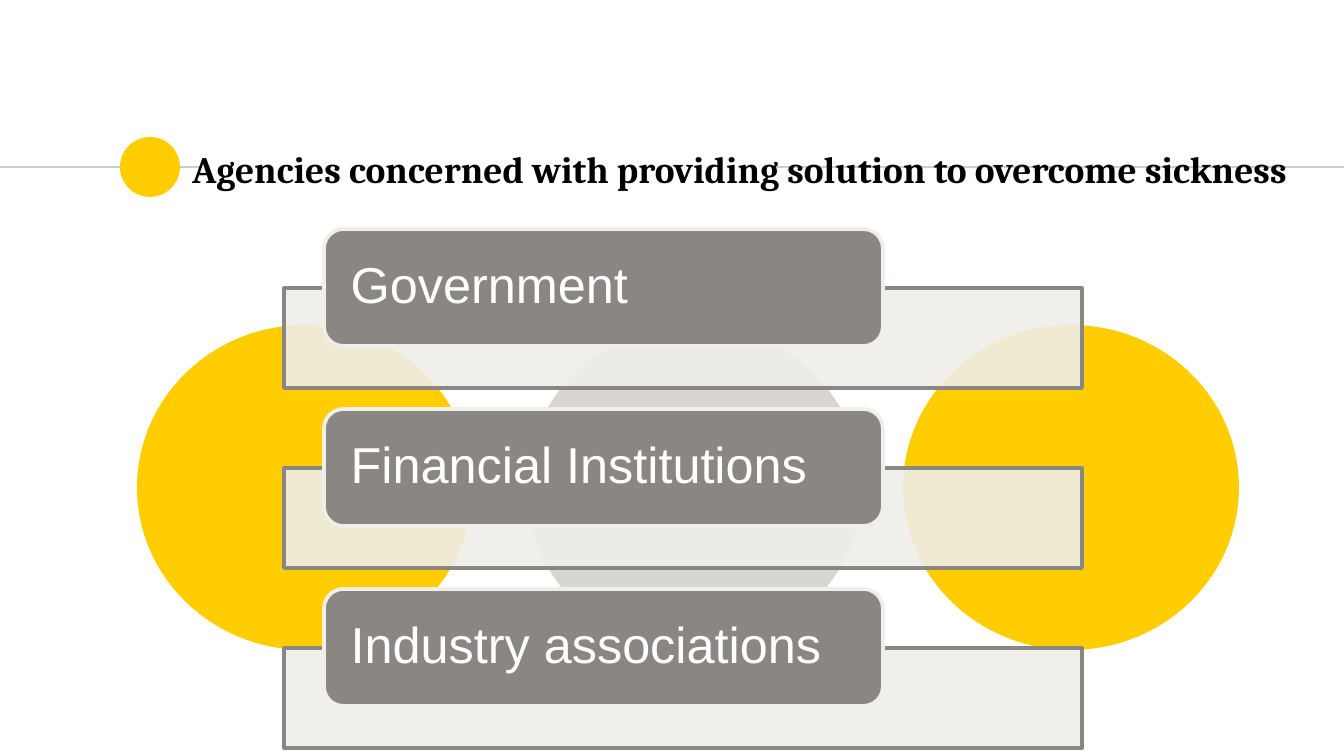
"""Build a slide listing the agencies that help overcome industrial sickness."""
from dataclasses import dataclass

import pptx
import pptx.util
from lxml import etree
from pptx.dml.color import RGBColor
from pptx.enum.shapes import MSO_CONNECTOR, MSO_SHAPE
from pptx.enum.text import MSO_ANCHOR, PP_ALIGN
from pptx.oxml.ns import qn

PX = 914400 / 134.4


@dataclass(frozen=True)
class Theme:
    yellow: str = "FFCD00"
    grey: str = "D8D6D2"
    rule: str = "CCCCCC"
    dark: str = "8A8682"
    pale: str = "F0EEE9"
    black: str = "000000"
    white: str = "FFFFFF"
    title_font: str = "Cambria"
    label_font: str = "Arial"
    title_size: int = 20
    label_size: int = 27
    border: float = 2
    hairline: float = 0.75
    bar_alpha: int = 90


@dataclass(frozen=True)
class Box:
    x: int
    y: int
    w: int
    h: int


@dataclass(frozen=True)
class Disc:
    box: Box
    color: str


@dataclass(frozen=True)
class Agency:
    name: str
    y: int


THEME = Theme()
ROW_TOP, ROW_PITCH = 229, 180
NAMES = ("Government", "Financial Institutions", "Industry associations")
AGENCIES = [Agency(name, ROW_TOP + i * ROW_PITCH) for i, name in enumerate(NAMES)]
BULLET = Disc(Box(120, 137, 60, 60), THEME.yellow)
DISCS = (
    Disc(Box(137, 325, 336, 325), THEME.yellow),
    Disc(Box(526, 325, 336, 325), THEME.grey),
    Disc(Box(903, 325, 336, 325), THEME.yellow),
)


def px(n: int) -> int:
    """Turn px into EMU."""
    return round(n * PX)


def place(box: Box) -> tuple[int, int, int, int]:
    """Return the box in EMU."""
    return px(box.x), px(box.y), px(box.w), px(box.h)


def rgb(color: str) -> RGBColor:
    """Return a colour from its hex code."""
    return RGBColor.from_string(color)


def add_shape(s, kind: MSO_SHAPE, box: Box, fill: str, line: str | None = None):
    """Draw a flat preset shape."""
    sp = s.shapes.add_shape(kind, *place(box))
    sp.shadow.inherit = False
    sp.fill.solid()
    sp.fill.fore_color.rgb = rgb(fill)
    if line:
        sp.line.color.rgb = rgb(line)
        sp.line.width = pptx.util.Pt(THEME.border)
    else:
        sp.line.fill.background()
    return sp


def add_rule(s, x1: int, x2: int, y: int) -> None:
    """Draw a thin horizontal line."""
    line = s.shapes.add_connector(MSO_CONNECTOR.STRAIGHT, px(x1), px(y), px(x2), px(y))
    line.line.color.rgb = rgb(THEME.rule)
    line.line.width = pptx.util.Pt(THEME.hairline)
    etree.SubElement(line._element.spPr, qn("a:effectLst"))


def write(sp, text: str, font: str, size: int, color: str, inset: int, bold: bool = False):
    """Write one left-aligned line, centred vertically, and return its paragraph."""
    tf = sp.text_frame
    tf.word_wrap = True
    tf.vertical_anchor = MSO_ANCHOR.MIDDLE
    tf.margin_left = tf.margin_right = px(inset)
    tf.margin_top = tf.margin_bottom = 0
    p = tf.paragraphs[0]
    p.text = text
    p.alignment = PP_ALIGN.LEFT
    p.font.name = font
    p.font.size = pptx.util.Pt(size)
    p.font.bold = bold
    p.font.color.rgb = rgb(color)
    return p


def add_disc(s, disc: Disc) -> None:
    """Draw a plain ellipse."""
    add_shape(s, MSO_SHAPE.OVAL, disc.box, disc.color)


def add_title(s, text: str) -> None:
    """Draw the heading with its bullet and rules."""
    add_rule(s, 0, 202, 167)
    add_disc(s, BULLET)
    add_rule(s, 774, 1344, 167)
    sp = s.shapes.add_textbox(*place(Box(179, 136, 1165, 65)))
    write(sp, text, THEME.title_font, THEME.title_size, THEME.black, 13, True)


def add_agency(s, agency: Agency) -> None:
    """Draw a translucent bar with a labelled pill over it."""
    bar_box = Box(284, agency.y + 59, 798, 100)
    bar = add_shape(s, MSO_SHAPE.RECTANGLE, bar_box, THEME.pale, THEME.dark)
    color = bar._element.spPr.find(qn("a:solidFill"))[0]
    etree.SubElement(color, qn("a:alpha"), val=str(THEME.bar_alpha * 1000))
    pill_box = Box(324, agency.y, 559, 117)
    pill = add_shape(s, MSO_SHAPE.ROUNDED_RECTANGLE, pill_box, THEME.dark, THEME.pale)
    p = write(pill, agency.name, THEME.label_font, THEME.label_size, THEME.white, 21)
    p.line_spacing = 0.9


def main() -> None:
    """Build and save the slide."""
    prs = pptx.Presentation()
    prs.slide_width, prs.slide_height = px(1344), px(756)
    s = prs.slides.add_slide(prs.slide_layouts[6])
    add_title(s, "Agencies concerned with providing solution to overcome sickness")
    for disc in DISCS:
        add_disc(s, disc)
    for agency in AGENCIES:
        add_agency(s, agency)
    prs.save("out.pptx")


if __name__ == "__main__":
    main()
